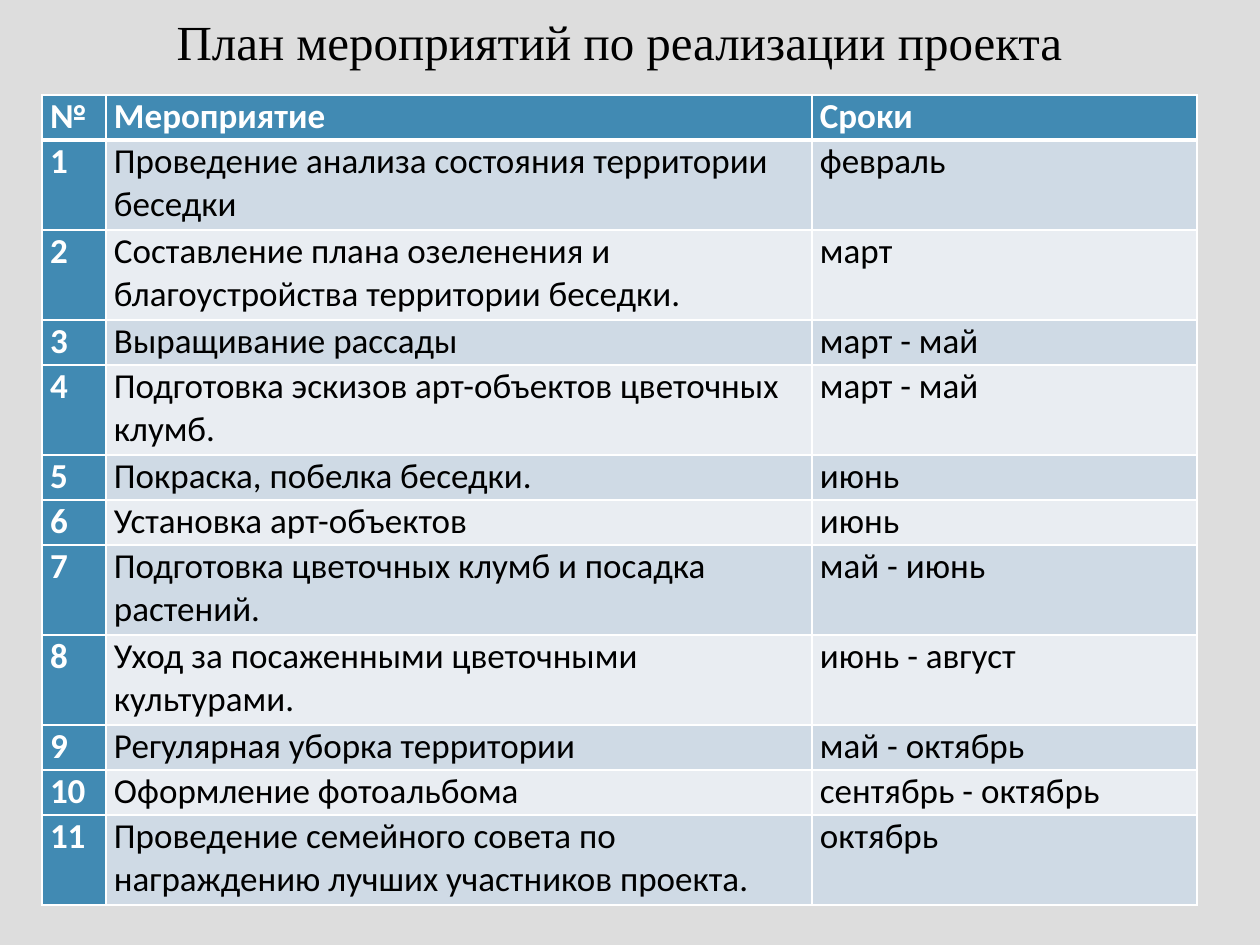
from lxml import etree
from pptx import Presentation
from pptx.dml.color import RGBColor
from pptx.enum.text import MSO_ANCHOR, PP_ALIGN
from pptx.oxml.ns import qn
from pptx.util import Pt

TOP, MIDDLE = MSO_ANCHOR.TOP, MSO_ANCHOR.MIDDLE
LEFT = PP_ALIGN.LEFT

TITLE = "План мероприятий по реализации проекта"
HEADER = ("№", "Мероприятие", "Сроки")
# (activity, dates, lines of text in the row)
ACTIVITIES = [
    ("Проведение анализа состояния территории беседки", "февраль", 2),
    ("Составление плана озеленения и благоустройства территории беседки.", "март", 2),
    ("Выращивание рассады", "март - май", 1),
    ("Подготовка эскизов арт-объектов цветочных клумб.", "март - май", 2),
    ("Покраска, побелка беседки.", "июнь", 1),
    ("Установка арт-объектов", "июнь", 1),
    ("Подготовка цветочных клумб и посадка растений.", "май - июнь", 2),
    ("Уход за посаженными цветочными культурами.", "июнь - август", 2),
    ("Регулярная уборка территории", "май - октябрь", 1),
    ("Оформление фотоальбома", "сентябрь - октябрь", 1),
    ("Проведение семейного совета по награждению лучших участников проекта.", "октябрь", 2),
]

BACKGROUND = RGBColor(0xDD, 0xDD, 0xDD)
BLUE = RGBColor(0x41, 0x8A, 0xB3)
BANDS = (RGBColor(0xCF, 0xDA, 0xE5), RGBColor(0xE9, 0xED, 0xF2))
WHITE = RGBColor(0xFF, 0xFF, 0xFF)
BLACK = RGBColor(0, 0, 0)

PX = 914400 // 126
COLUMNS = (64, 706, 385)
LINE_HEIGHT = 45
CELL_INSET = 8


def px(n):
    return n * PX


def set_font(p, name, size, color, bold=False):
    font = p.runs[0].font
    font.name, font.size, font.bold = name, Pt(size), bold
    font.color.rgb = color


def set_borders(cell, top, bottom):
    """Draw white borders; they must come before the fill in tcPr."""
    tcPr = cell._tc.get_or_add_tcPr()
    widths = {"a:lnL": 1, "a:lnR": 1, "a:lnT": top, "a:lnB": bottom}
    for i, (tag, width) in enumerate(widths.items()):
        ln = etree.Element(qn(tag), w=str(Pt(width)))
        fill = etree.SubElement(ln, qn("a:solidFill"))
        etree.SubElement(fill, qn("a:srgbClr"), val=str(WHITE))
        tcPr.insert(i, ln)


def format_cell(cell, text, row, col):
    heading = row == 0 or col == 0
    cell.text = text
    cell.margin_left = cell.margin_right = px(CELL_INSET)
    cell.margin_top = cell.margin_bottom = 0
    cell.vertical_anchor = TOP
    cell.fill.solid()
    cell.fill.fore_color.rgb = BLUE if heading else BANDS[(row - 1) % 2]
    set_font(cell.text_frame.paragraphs[0], "Calibri", 20,
             WHITE if heading else BLACK, heading)
    set_borders(cell, top=3 if row == 1 else 1, bottom=3 if row == 0 else 1)


def add_title(slide):
    title = slide.shapes.title
    title.left, title.top, title.width, title.height = map(px, (164, 5, 932, 72))
    tf = title.text_frame
    tf.text = TITLE
    tf.word_wrap = False
    tf.vertical_anchor = MIDDLE
    p = tf.paragraphs[0]
    p.alignment = LEFT
    set_font(p, "Times New Roman", 28, BLACK)


def add_plan(slide):
    rows = [HEADER] + [(str(n), name, dates)
                       for n, (name, dates, _) in enumerate(ACTIVITIES, 1)]
    heights = [LINE_HEIGHT] + [LINE_HEIGHT * lines for _, _, lines in ACTIVITIES]
    table = slide.shapes.add_table(len(rows), len(COLUMNS), px(42), px(95),
                                   px(sum(COLUMNS)), px(sum(heights))).table
    table.first_col = True
    for column, width in zip(table.columns, COLUMNS):
        column.width = px(width)
    for r, (texts, height) in enumerate(zip(rows, heights)):
        table.rows[r].height = px(height)
        for c, text in enumerate(texts):
            format_cell(table.cell(r, c), text, r, c)


prs = Presentation()
prs.slide_width, prs.slide_height = px(1260), px(945)
slide = prs.slides.add_slide(prs.slide_layouts[5])
slide.background.fill.solid()
slide.background.fill.fore_color.rgb = BACKGROUND
add_title(slide)
add_plan(slide)
prs.save("out.pptx")
